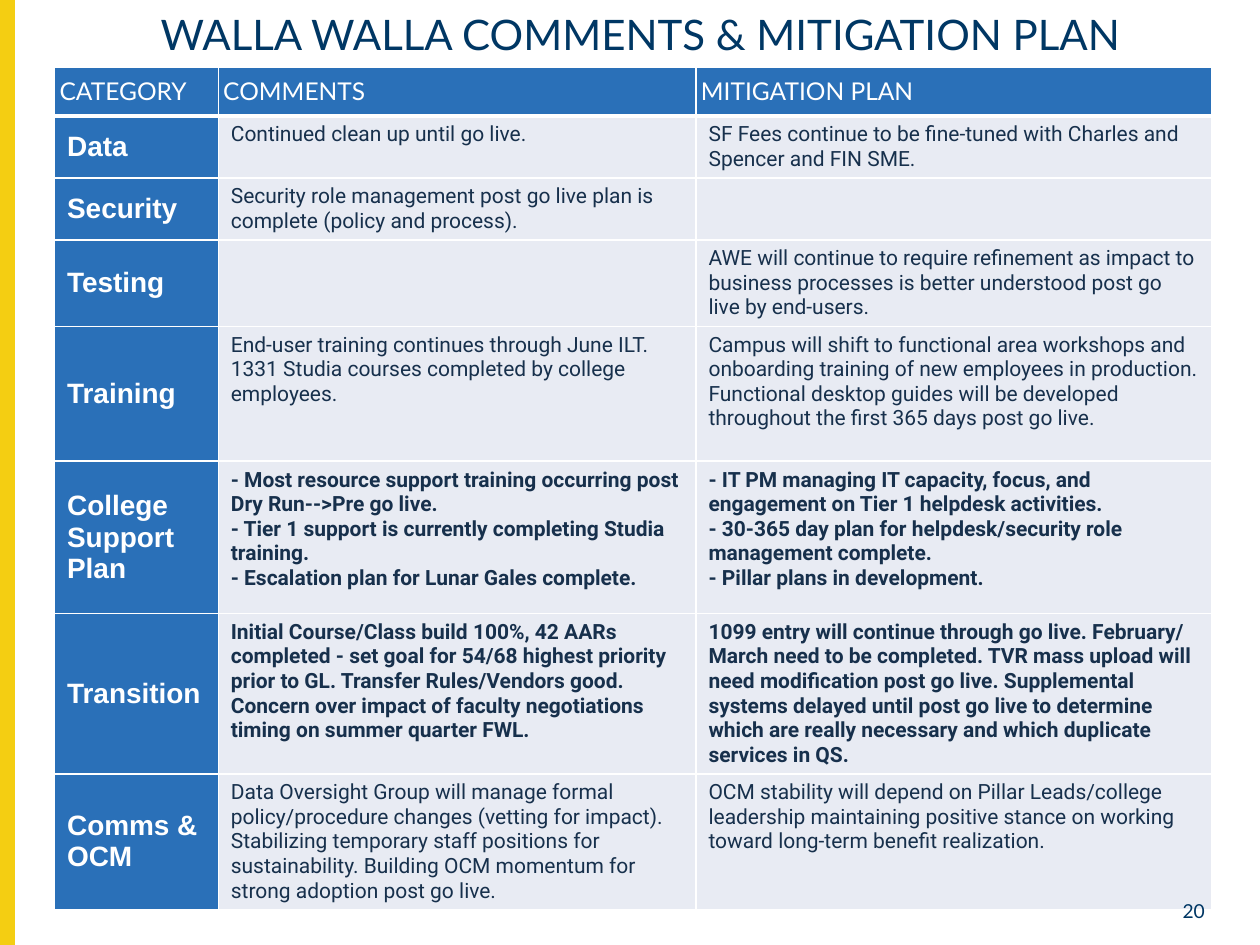
import pptx
import pptx.util
import pptx.dml.color
import pptx.enum.text
import pptx.enum.shapes
import pptx.oxml

Cm, Pt = pptx.util.Cm, pptx.util.Pt
RGB = pptx.dml.color.RGBColor
ALIGN = pptx.enum.text.PP_ALIGN
MID = pptx.enum.text.MSO_ANCHOR.MIDDLE
TOP = pptx.enum.text.MSO_ANCHOR.TOP

WHITE = RGB(0xFF, 0xFF, 0xFF)
GOLD = RGB(0xF4, 0xCE, 0x12)
BLUE = RGB(0x2A, 0x70, 0xB8)
PALE = RGB(0xE8, 0xEB, 0xF3)
INK = RGB(0x17, 0x30, 0x4C)
NAVY = RGB(0x00, 0x37, 0x64)

WIDTHS = [3.3, 9.63, 10.39]
HEAD = ["CATEGORY", "COMMENTS", "MITIGATION PLAN"]
# Height in cm, bold body text, category, comments, plan
ROWS = [
    (1.14, False, "Data",
     ["Continued clean up until go live."],
     ["SF Fees continue to be fine-tuned with Charles and Spencer and FIN SME."]),
    (1.22, False, "Security",
     ["Security role management post go live plan is complete (policy and process)."],
     []),
    (1.7, False, "Testing",
     [],
     ["AWE will continue to require refinement as impact to business processes "
      "is better understood post go live by end-users."]),
    (2.72, False, "Training",
     ["End-user training continues through June ILT. 1331 Studia courses "
      "completed by college employees."],
     ["Campus will shift to functional area workshops and onboarding training of "
      "new employees in production. Functional desktop guides will be developed "
      "throughout the first 365 days post go live."]),
    (3.07, True, "College Support Plan",
     ["- Most resource support training occurring post Dry Run-->Pre go live.",
      "- Tier 1 support is currently completing Studia training.",
      "- Escalation plan for Lunar Gales complete."],
     ["- IT PM managing IT capacity, focus, and engagement on Tier 1 helpdesk activities.",
      "- 30-365 day plan for helpdesk/security role management complete.",
      "- Pillar plans in development."]),
    (3.07, True, "Transition",
     ["Initial Course/Class build 100%, 42 AARs completed - set goal for 54/68 "
      "highest priority prior to GL. Transfer Rules/Vendors good. Concern over "
      "impact of faculty negotiations timing on summer quarter FWL."],
     ["1099 entry will continue through go live. February/ March need to be "
      "completed. TVR mass upload will need modification post go live. "
      "Supplemental systems delayed until post go live to determine which are "
      "really necessary and which duplicate services in QS."]),
    (2.72, False, "Comms & OCM",
     ["Data Oversight Group will manage formal policy/procedure changes (vetting "
      "for impact). Stabilizing temporary staff positions for sustainability. "
      "Building OCM momentum for strong adoption post go live."],
     ["OCM stability will depend on Pillar Leads/college leadership maintaining "
      "positive stance on working toward long-term benefit realization."]),
]


def write(frame, lines, face, size, color, bold=False, align=ALIGN.LEFT):
    frame.word_wrap = True
    for i, line in enumerate(lines):
        para = frame.add_paragraph() if i else frame.paragraphs[0]
        para.alignment = align
        run = para.add_run()
        run.text = line
        run.font.name, run.font.size = face, Pt(size)
        run.font.bold, run.font.color.rgb = bold, color


def paint(cell, color, base):
    """Fill a cell and give it white borders, the bottom one base points wide."""
    cell.fill.solid()
    cell.fill.fore_color.rgb = color
    props = cell._tc.get_or_add_tcPr()
    for i, side in enumerate("LRTB"):
        wide = Pt(base if side == "B" else 1)
        props.insert(i, pptx.oxml.parse_xml(
            f'<a:ln{side} xmlns:a="http://schemas.openxmlformats.org/drawingml/2006/main"'
            f' w="{wide}"><a:solidFill><a:srgbClr val="{WHITE}"/></a:solidFill></a:ln{side}>'))


deck = pptx.Presentation()
deck.slide_width, deck.slide_height = Cm(25.4), Cm(19.05)
slide = deck.slides.add_slide(deck.slide_layouts[6])

# Gold edge
edge = slide.shapes.add_shape(pptx.enum.shapes.MSO_SHAPE.RECTANGLE,
                              0, 0, Cm(0.28), deck.slide_height)
edge.shadow.inherit = False
edge.fill.solid()
edge.fill.fore_color.rgb = GOLD
edge.line.color.rgb = GOLD
edge.line.width = Pt(1)

# Table
high = [0.99] + [row[0] for row in ROWS]
grid = slide.shapes.add_table(len(high), len(WIDTHS), Cm(1.1), Cm(1.35),
                              Cm(sum(WIDTHS)), Cm(sum(high))).table
for col, wide in zip(grid.columns, WIDTHS):
    col.width = Cm(wide)
for row, tall in zip(grid.rows, high):
    row.height = Cm(tall)

for c, label in enumerate(HEAD):
    cell = grid.cell(0, c)
    cell.margin_left, cell.margin_right = Cm(0.1), Cm(0.03)
    cell.margin_top = cell.margin_bottom = 0
    cell.vertical_anchor = MID
    write(cell.text_frame, [label], "Lato", 14, WHITE)
    paint(cell, BLUE, 3)

for r, (tall, bold, name, *texts) in enumerate(ROWS, 1):
    cell = grid.cell(r, 0)
    cell.vertical_anchor = MID
    write(cell.text_frame, [name], "Arial", 16, WHITE, True)
    paint(cell, BLUE, 1)
    for c, lines in enumerate(texts, 1):
        cell = grid.cell(r, c)
        cell.vertical_anchor = TOP
        write(cell.text_frame, lines, "Roboto", 12, INK, bold)
        paint(cell, PALE, 1)

# Page number
page = slide.shapes.add_textbox(Cm(23.34), Cm(18), Cm(1.3), Cm(0.66)).text_frame
page.margin_right = Cm(0.35)
write(page, ["20"], "Lato", 11, NAVY, align=ALIGN.RIGHT)

# Title
title = slide.shapes.add_textbox(Cm(1), Cm(0.13), Cm(23.82), Cm(1.22)).text_frame
title.vertical_anchor = MID
write(title, ["WALLA WALLA COMMENTS & MITIGATION PLAN"], "Lato", 24, NAVY,
      align=ALIGN.CENTER)
title.paragraphs[0].line_spacing = 0.9

deck.save("out.pptx")
